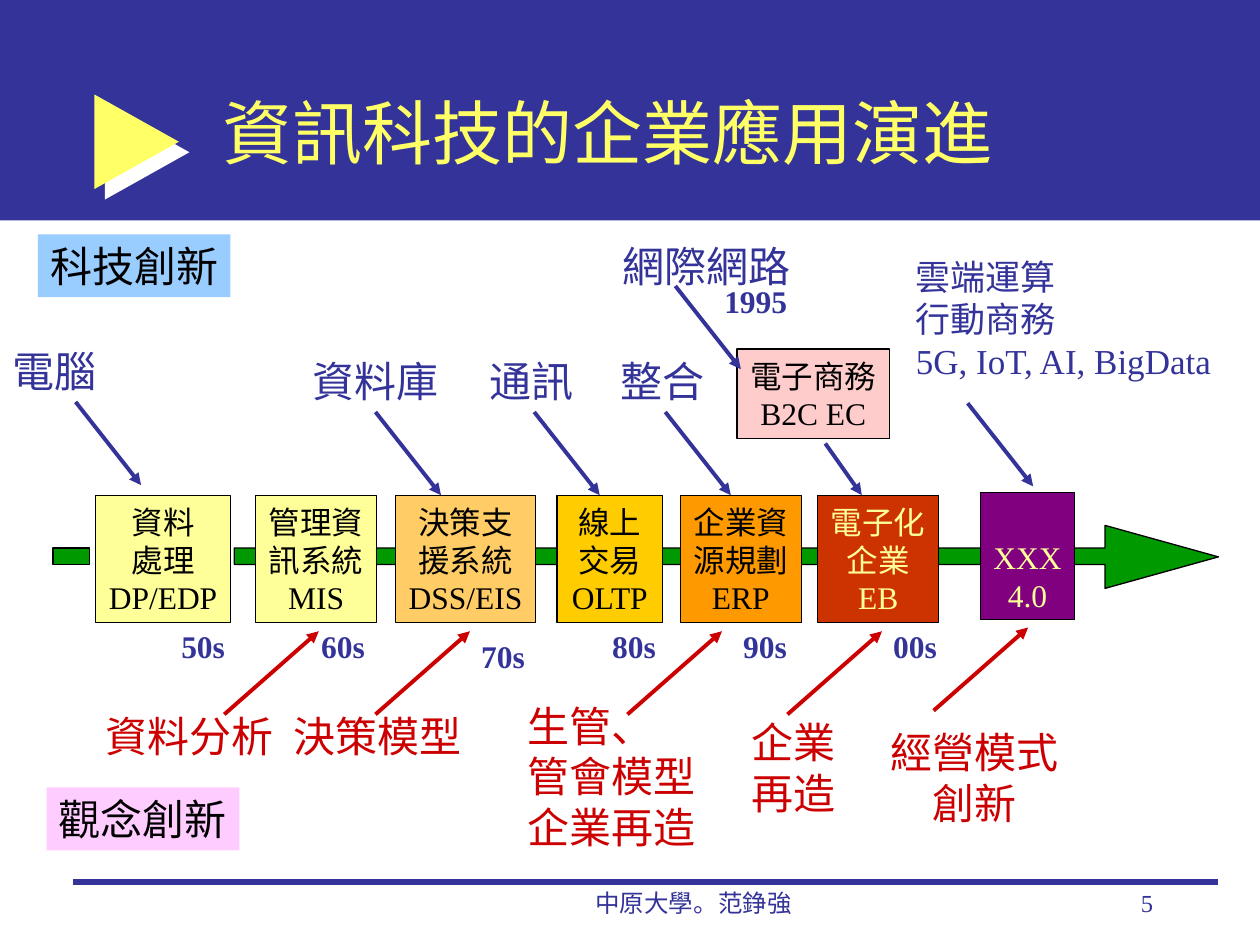
"""Build a slide on how business applications of information technology evolved."""
import pptx
import pptx.dml.color
import pptx.enum.shapes
import pptx.enum.text
import pptx.oxml
import pptx.oxml.ns
import pptx.util
from lxml import etree

Inches = pptx.util.Inches
Pt = pptx.util.Pt
rgb = pptx.dml.color.RGBColor.from_string
qn = pptx.oxml.ns.qn
Shapes = pptx.enum.shapes.MSO_SHAPE
Align = pptx.enum.text.PP_ALIGN
Anchor = pptx.enum.text.MSO_ANCHOR

NAVY, RED, BLACK, YELLOW, CREAM = "333399", "CC0000", "000000", "FFFF66", "FFFF99"

presentation = pptx.Presentation()
presentation.slide_width = Inches(10)
presentation.slide_height = Inches(7.5)
slide = presentation.slides.add_slide(presentation.slide_layouts[6])
shapes = slide.shapes


def add_label(bounds, text, size, color, align=Align.LEFT, fill=None, border=False,
              bold=False, font="Times New Roman", anchor=Anchor.TOP, wrap=False):
    box = [Inches(length) for length in bounds]
    if fill:
        label = shapes.add_shape(Shapes.RECTANGLE, *box)
        label.shadow.inherit = False
        label.fill.solid()
        label.fill.fore_color.rgb = rgb(fill)
        if border:
            label.line.color.rgb = rgb(BLACK)
            label.line.width = Pt(0.75)
        else:
            label.line.fill.background()
    else:
        label = shapes.add_textbox(*box)
    frame = label.text_frame
    frame.text = text
    frame.word_wrap = wrap
    frame.vertical_anchor = anchor
    for paragraph in frame.paragraphs:
        paragraph.alignment = align
        for run in paragraph.runs:
            run.font.size = Pt(size)
            run.font.name = font
            run.font.bold = bold
            run.font.color.rgb = rgb(color)


def add_line(x, y, dx, dy, color, width, arrow=True):
    line = shapes.add_connector(pptx.enum.shapes.MSO_CONNECTOR.STRAIGHT,
                                Inches(x), Inches(y), Inches(x + dx), Inches(y + dy))
    line.line.color.rgb = rgb(color)
    line.line.width = Pt(width)
    if arrow:
        etree.SubElement(line.line._get_or_add_ln(), qn("a:tailEnd"), type="triangle")
    etree.SubElement(line._element.spPr, qn("a:effectLst"))


banner = shapes.add_shape(Shapes.RECTANGLE, 0, 0, Inches(10), Inches(1.75))
banner.shadow.inherit = False
banner.fill.solid()
banner.fill.fore_color.rgb = rgb(NAVY)
banner.line.fill.background()

pointer = shapes.add_shape(Shapes.RIGHT_ARROW, Inches(0.75), Inches(0.75), Inches(0.67), Inches(0.75))
pointer.adjustments[0] = 0.38
pointer.adjustments[1] = 1
pointer.fill.solid()
pointer.fill.fore_color.rgb = rgb(YELLOW)
pointer.line.fill.background()
pointer.shadow.inherit = False
effects = pointer._element.spPr.find(qn("a:effectLst"))
shadow = etree.SubElement(effects, qn("a:outerShdw"), dist=str(Pt(8.5)), dir="2700000",
                          algn="ctr", rotWithShape="0")
etree.SubElement(shadow, qn("a:srgbClr"), val="FFFFFF")

add_line(0.58, 7, 9.09, 0, NAVY, 3, arrow=False)
add_label((3.92, 7, 3.17, 0.5), "中原大學。范錚強", 14, NAVY, Align.CENTER, wrap=True)
add_label((7.17, 7, 2.08, 0.5), "5", 14, NAVY, Align.RIGHT, wrap=True)
add_label((1.67, 0.42, 7.58, 1.25), "資訊科技的企業應用演進", 40, YELLOW,
          font="Arial", anchor=Anchor.MIDDLE, wrap=True)

timeline_parts = [
    [(8.77, 4.17), (8.77, 4.35), (1.86, 4.35), (1.86, 4.48), (8.77, 4.48), (8.77, 4.67), (9.67, 4.42)],
    [(0.99, 4.35), (0.99, 4.48), (1.57, 4.48), (1.57, 4.35)],
    [(0.42, 4.35), (0.42, 4.48), (0.71, 4.48), (0.71, 4.35)],
]
outlines = [[(Inches(x), Inches(y)) for x, y in part] for part in timeline_parts]
builder = shapes.build_freeform(*outlines[0][0])
builder.add_line_segments(outlines[0][1:], close=True)
for outline in outlines[1:]:
    builder.move_to(*outline[0])
    builder.add_line_segments(outline[1:], close=True)
timeline = builder.convert_to_shape()
timeline.shadow.inherit = False
timeline.fill.solid()
timeline.fill.fore_color.rgb = rgb("009900")
timeline.line.color.rgb = rgb(BLACK)
timeline.line.width = Pt(0.75)

systems = [
    (0.76, 3.93, 1.07, 1.01, "資料\n處理\nDP/EDP", "FFFF99", BLACK),
    (2.03, 3.93, 0.96, 1.01, "管理資\n訊系統\nMIS", "FFFF99", BLACK),
    (3.14, 3.93, 1.11, 1.01, "決策支\n援系統\nDSS/EIS", "FFCC66", BLACK),
    (4.42, 3.93, 0.84, 1.01, "線上\n交易\nOLTP", "FFCC00", BLACK),
    (5.4, 3.93, 0.96, 1.01, "企業資\n源規劃\nERP", "FF9900", BLACK),
    (6.49, 3.93, 0.96, 1.01, "電子化\n企業\nEB", "CC3300", CREAM),
    (5.85, 2.77, 1.21, 0.71, "電子商務\nB2C EC", "FFCCCC", BLACK),
    (7.78, 3.91, 0.75, 1.01, "XXX\n4.0", "800080", CREAM),
]
for *bounds, text, fill, color in systems:
    add_label(bounds, text, 18, color, Align.CENTER, fill, border=True, anchor=Anchor.BOTTOM)

add_label((0.3, 1.86, 1.53, 0.5), "科技創新", 24, BLACK, fill="99CCFF")
add_label((0.37, 6.25, 1.53, 0.5), "觀念創新", 24, BLACK, fill="FFCCFF")

technologies = [
    (0, 2.69, 0.87, 0.5, "電腦", 24),
    (2.38, 2.77, 1.2, 0.5, "資料庫", 24),
    (3.79, 2.77, 0.87, 0.5, "通訊", 24),
    (4.83, 2.77, 0.87, 0.5, "整合", 24),
    (4.84, 1.86, 1.53, 0.5, "網際網路", 24),
    (7.17, 1.98, 2.57, 1.11, "雲端運算\n行動商務\n5G, IoT, AI, BigData", 20),
]
for *bounds, text, size in technologies:
    add_label(bounds, text, size, NAVY)

concepts = [
    (0.74, 5.59, 1.53, 0.5, "資料分析", Align.LEFT),
    (2.23, 5.59, 1.53, 0.5, "決策模型", Align.LEFT),
    (4.09, 5.51, 1.53, 1.3, "生管、\n管會模型\n企業再造", Align.LEFT),
    (5.87, 5.64, 0.87, 0.9, "企業\n再造", Align.LEFT),
    (6.97, 5.72, 1.53, 0.9, "經營模式\n創新", Align.CENTER),
]
for *bounds, text, align in concepts:
    add_label(bounds, text, 24, RED, align)

decades = [(1.34, 4.93, "50s"), (2.45, 4.93, "60s"), (3.72, 5.01, "70s"),
           (4.76, 4.93, "80s"), (5.8, 4.93, "90s"), (6.99, 4.93, "00s")]
for left, top, text in decades:
    add_label((left, top, 0.55, 0.4), text, 18, NAVY, bold=True)
add_label((5.65, 2.19, 0.7, 0.4), "1995", 18, NAVY, bold=True)

for x, y in [(0.6, 3.19), (2.98, 3.27), (4.24, 3.27), (5.28, 3.27), (5.36, 2.27), (7.68, 3.2)]:
    add_line(x, y, 0.52, 0.66, NAVY, 2.25)
add_line(6.55, 3.52, 0.29, 0.41, NAVY, 2.25)
for x, y in [(1.78, 5.67), (2.98, 5.67), (4.98, 5.67), (6.25, 5.67), (7.41, 5.64)]:
    add_line(x, y, 0.75, -0.66, RED, 2.25)

presentation.save("out.pptx")
